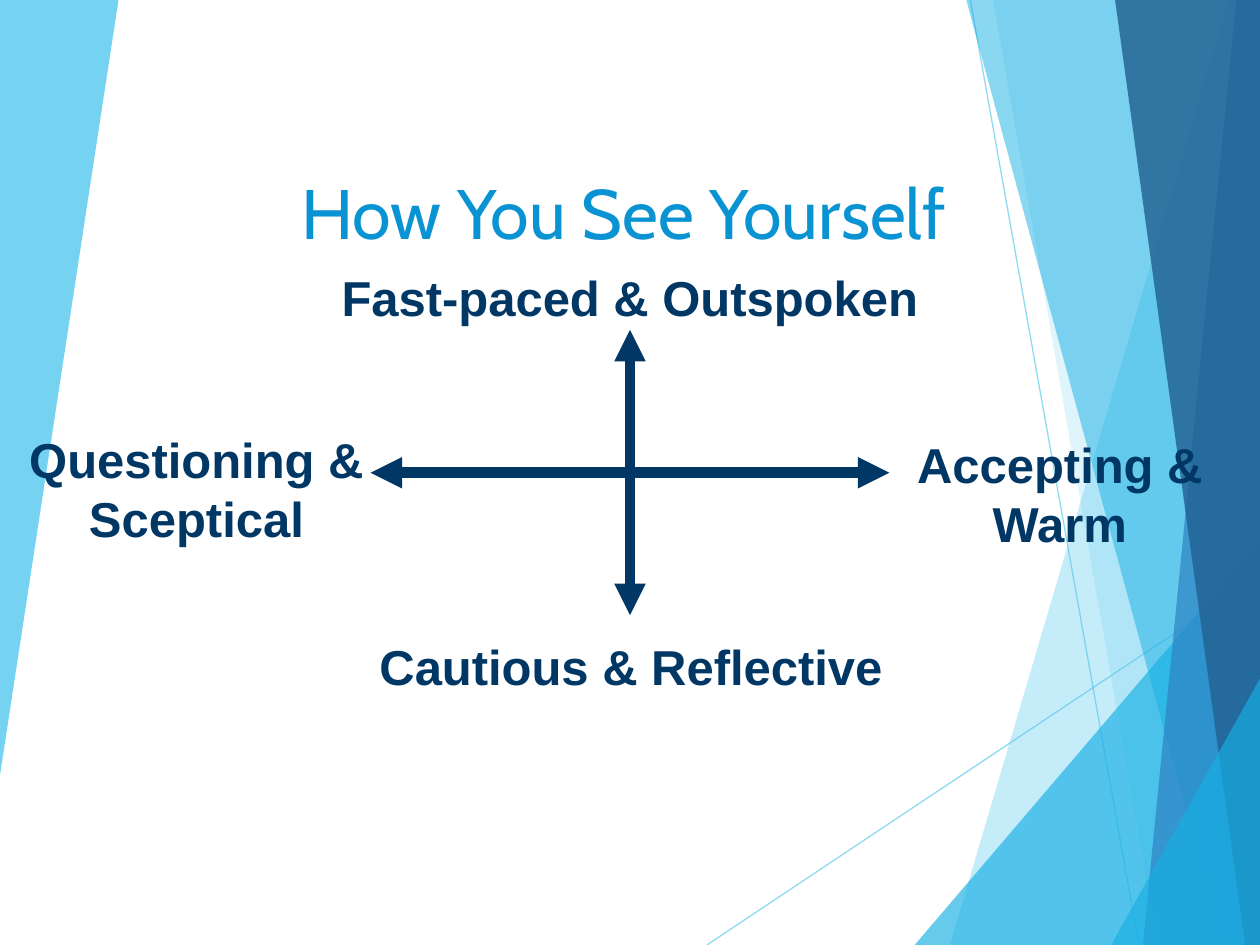
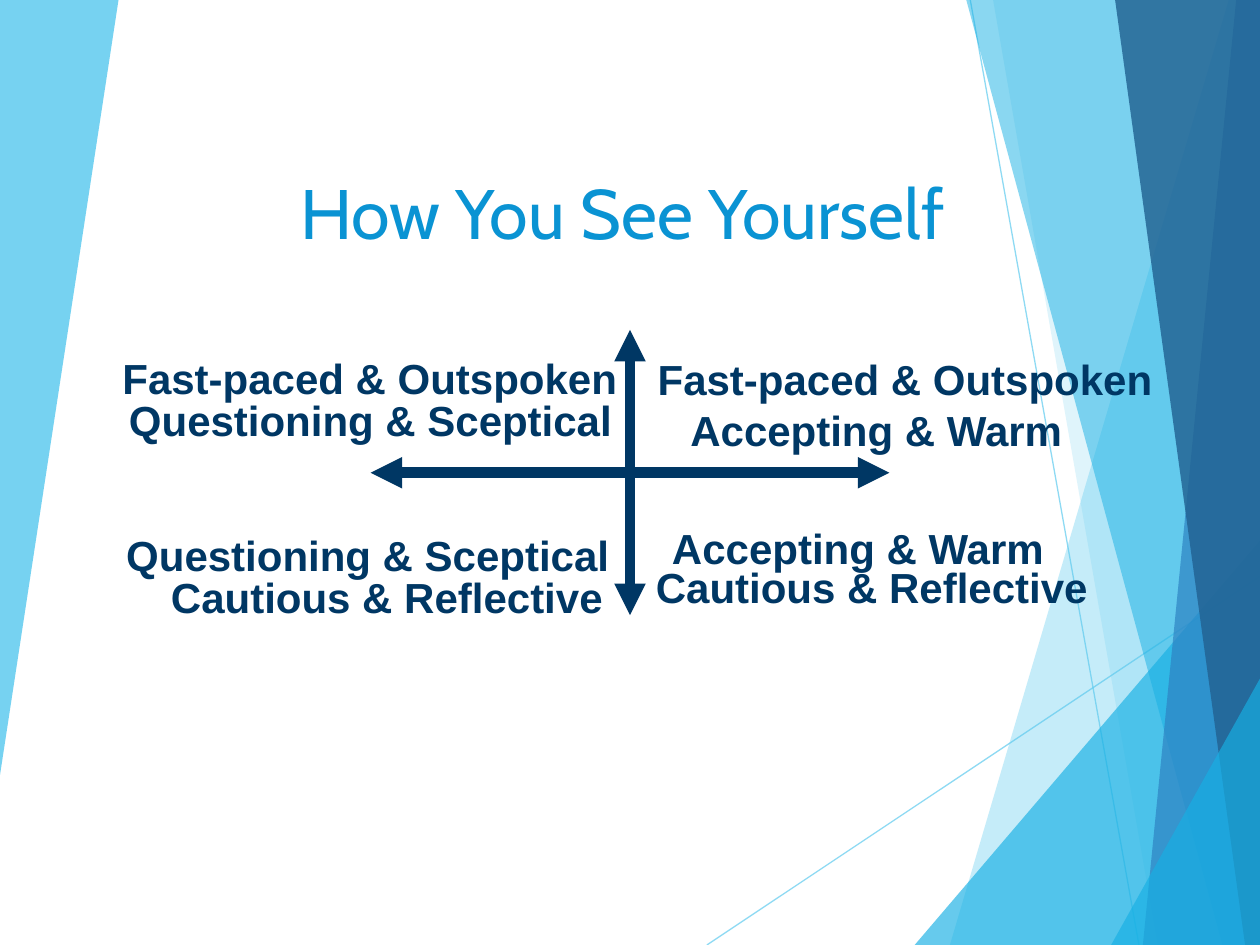
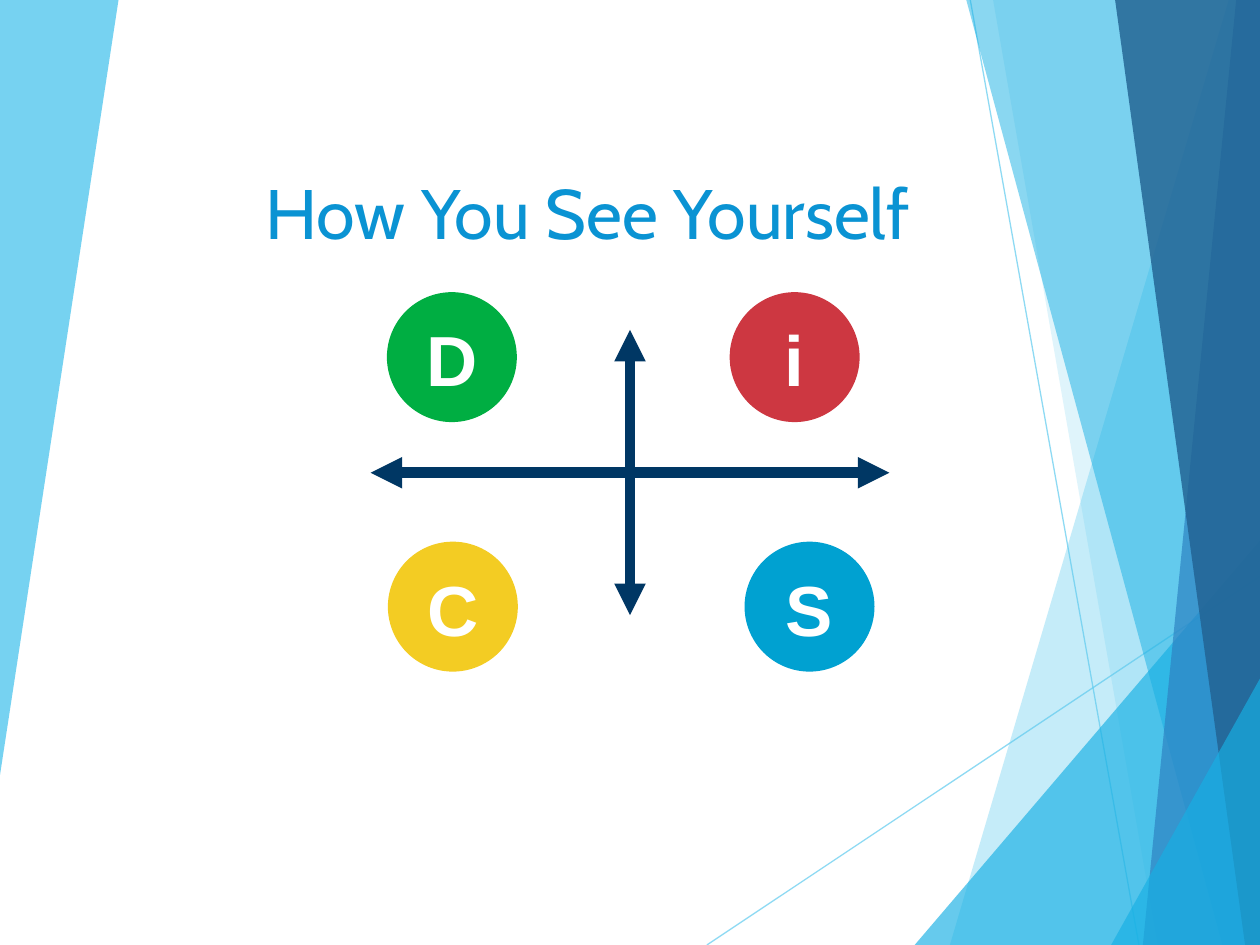
from dataclasses import dataclass

from lxml import etree
from pptx import Presentation
from pptx.dml.color import RGBColor
from pptx.enum.shapes import MSO_CONNECTOR, MSO_SHAPE
from pptx.enum.text import MSO_AUTO_SIZE, PP_ALIGN
from pptx.oxml.ns import qn
from pptx.shapes.connector import Connector
from pptx.slide import Slide
from pptx.util import Cm, Pt

STRAIGHT = MSO_CONNECTOR.STRAIGHT
OVAL = MSO_SHAPE.OVAL
CENTER = PP_ALIGN.CENTER
FIT_SHAPE = MSO_AUTO_SIZE.SHAPE_TO_FIT_TEXT

WHITE = RGBColor(0xFF, 0xFF, 0xFF)
NAVY = RGBColor(0x00, 0x37, 0x64)
TITLE_BLUE = RGBColor(0x0A, 0x93, 0xD3)
SKY = RGBColor(0x5F, 0xCB, 0xEF)
CYAN = RGBColor(0x17, 0xB0, 0xE4)
MID_BLUE = RGBColor(0x2E, 0x83, 0xC3)
DEEP_BLUE = RGBColor(0x22, 0x62, 0x92)
GREEN = RGBColor(0x00, 0xAE, 0x42)
RED = RGBColor(0xCD, 0x37, 0x41)
BLUE = RGBColor(0x00, 0xA1, 0xD1)
YELLOW = RGBColor(0xF3, 0xCC, 0x23)

WIDTH, HEIGHT = 25.4, 19.05
CIRCLE_SIZE = 2.62
TITLE = "How You See Yourself"
FAST = "Fast-paced & Outspoken"
CAUTIOUS = "Cautious & Reflective"
QUESTIONING = "Questioning & Sceptical"
ACCEPTING = "Accepting & Warm"


@dataclass(frozen=True)
class TextStyle:
    font: str
    size: float
    color: RGBColor
    bold: bool = True


@dataclass(frozen=True)
class Label:
    text: str
    left: float
    top: float
    width: float
    height: float
    wrap: bool = True


@dataclass(frozen=True)
class Line:
    start: tuple[float, float]
    end: tuple[float, float]


@dataclass(frozen=True)
class Facet:
    points: list[tuple[float, float]]
    color: RGBColor
    opacity: int


@dataclass(frozen=True)
class Circle:
    letter: str
    left: float
    top: float
    color: RGBColor


def right_band(top_x: float, bottom_x: float, color: RGBColor, opacity: int) -> Facet:
    points = [(top_x, 0), (bottom_x, HEIGHT), (WIDTH, HEIGHT), (WIDTH, 0)]
    return Facet(points, color, opacity)


def right_corner(bottom_x: float, right_y: float) -> Facet:
    return Facet([(bottom_x, HEIGHT), (WIDTH, right_y), (WIDTH, HEIGHT)], CYAN, 66)


TITLE_STYLE = TextStyle("Cabin", 40, TITLE_BLUE, False)
AXIS_STYLE = TextStyle("Arial", 28, NAVY)
QUADRANT_STYLE = TextStyle("Arial", 24, NAVY)
LETTER_STYLE = TextStyle("Arial", 40.5, WHITE)

HAIRLINES = [
    Line((14.25, HEIGHT), (WIDTH, 11.62)),
    Line((19.56, 0), (22.96, HEIGHT)),
]
FACETS = [
    right_band(24.77, 19.15, SKY, 36),
    right_band(20.02, 23.34, SKY, 20),
    right_corner(18.44, 10.9),
    right_band(19.48, 24.64, CYAN, 50),
    right_band(24.92, 23.04, MID_BLUE, 70),
    right_band(22.48, 25.1, DEEP_BLUE, 82),
    right_corner(22.4, 13.68),
    Facet([(0, 0), (2.39, 0), (0, 15.63)], SKY, 85),
]
AXES = [
    Line((12.7, 6.65), (12.7, 12.4)),
    Line((7.47, 9.53), (17.93, 9.53)),
]
AXIS_LABELS = [
    Label(FAST, 6.55, 5.26, 12.29, 1.45, False),
    Label(CAUTIOUS, 7.32, 12.7, 10.8, 1.45, False),
    Label("Questioning &\nSceptical", -1.73, 8.53, 11.38, 2.64),
    Label("Accepting &\nWarm", 14.43, 8.64, 13.87, 2.64),
]
QUADRANT_LABELS = [
    Label(FAST, 2.16, 6.99, 10.59, 1.27, False),
    Label(CAUTIOUS, 3.15, 11.4, 9.3, 1.27, False),
    Label(QUESTIONING, 1.12, 7.82, 12.7, 1.27),
    Label(ACCEPTING, 9.93, 8.03, 15.47, 1.27),
    Label(FAST, 12.95, 7.01, 10.59, 1.27),
    Label(QUESTIONING, 1.88, 10.54, 11.07, 1.27),
    Label(ACCEPTING, 12.24, 10.41, 10.11, 1.27),
    Label(CAUTIOUS, 11.63, 11.2, 11.89, 1.27),
]
CIRCLES = [
    Circle("D", 7.8, 5.89, GREEN),
    Circle("i", 14.71, 5.89, RED),
    Circle("S", 15.01, 10.92, BLUE),
    Circle("C", 7.82, 10.92, YELLOW),
]


def set_opacity(element: etree.ElementBase, percent: int) -> None:
    for color in element.iter(qn("a:srgbClr")):
        etree.SubElement(color, qn("a:alpha"), val=str(percent * 1000))


def add_line(slide: Slide, line: Line, color: RGBColor, weight: float) -> Connector:
    ends = [Cm(value) for value in (*line.start, *line.end)]
    connector = slide.shapes.add_connector(STRAIGHT, *ends)
    connector.line.color.rgb = color
    connector.line.width = Pt(weight)
    etree.SubElement(connector.element.spPr, qn("a:effectLst"))
    return connector


def add_axis(slide: Slide, axis: Line) -> None:
    connector = add_line(slide, axis, NAVY, 6)
    outline = connector.element.spPr.find(qn("a:ln"))
    for end in ("a:headEnd", "a:tailEnd"):
        etree.SubElement(outline, qn(end), type="triangle")


def add_facet(slide: Slide, facet: Facet) -> None:
    points = [(Cm(x), Cm(y)) for x, y in facet.points]
    builder = slide.shapes.build_freeform(*points[0])
    builder.add_line_segments(points[1:])
    shape = builder.convert_to_shape()
    shape.shadow.inherit = False
    shape.fill.solid()
    shape.fill.fore_color.rgb = facet.color
    shape.line.fill.background()
    set_opacity(shape.element, facet.opacity)


def add_label(slide: Slide, label: Label, style: TextStyle) -> None:
    box = slide.shapes.add_textbox(
        Cm(label.left), Cm(label.top), Cm(label.width), Cm(label.height)
    )
    frame = box.text_frame
    frame.word_wrap = label.wrap
    frame.auto_size = FIT_SHAPE
    frame.text = label.text
    for para in frame.paragraphs:
        para.alignment = CENTER
        for span in para.runs:
            span.font.name = style.font
            span.font.size = Pt(style.size)
            span.font.bold = style.bold
            span.font.color.rgb = style.color


def add_circle(slide: Slide, circle: Circle) -> None:
    shape = slide.shapes.add_shape(
        OVAL, Cm(circle.left), Cm(circle.top), Cm(CIRCLE_SIZE), Cm(CIRCLE_SIZE)
    )
    shape.shadow.inherit = False
    shape.fill.solid()
    shape.fill.fore_color.rgb = circle.color
    shape.line.fill.background()
    letter = Label(circle.letter, circle.left + 0.04, circle.top + 0.35, 2.54, 1.98)
    add_label(slide, letter, LETTER_STYLE)


def add_page(deck: Presentation, title_width: float) -> Slide:
    page = deck.slides.add_slide(deck.slide_layouts[6])
    for hairline in HAIRLINES:
        connector = add_line(page, hairline, SKY, 0.75)
        set_opacity(connector.element, 70)
    for facet in FACETS:
        add_facet(page, facet)
    add_label(page, Label(TITLE, 1.57, 3.3, title_width, 1.96), TITLE_STYLE)
    for axis in AXES:
        add_axis(page, axis)
    return page


def main() -> None:
    deck = Presentation()
    deck.slide_width, deck.slide_height = Cm(WIDTH), Cm(HEIGHT)

    axis_page = add_page(deck, 22)
    for label in AXIS_LABELS:
        add_label(axis_page, label, AXIS_STYLE)

    quadrant_page = add_page(deck, 21.95)
    for label in QUADRANT_LABELS:
        add_label(quadrant_page, label, QUADRANT_STYLE)

    circle_page = add_page(deck, 20.55)
    for circle in CIRCLES:
        add_circle(circle_page, circle)

    deck.save("out.pptx")


if __name__ == "__main__":
    main()
